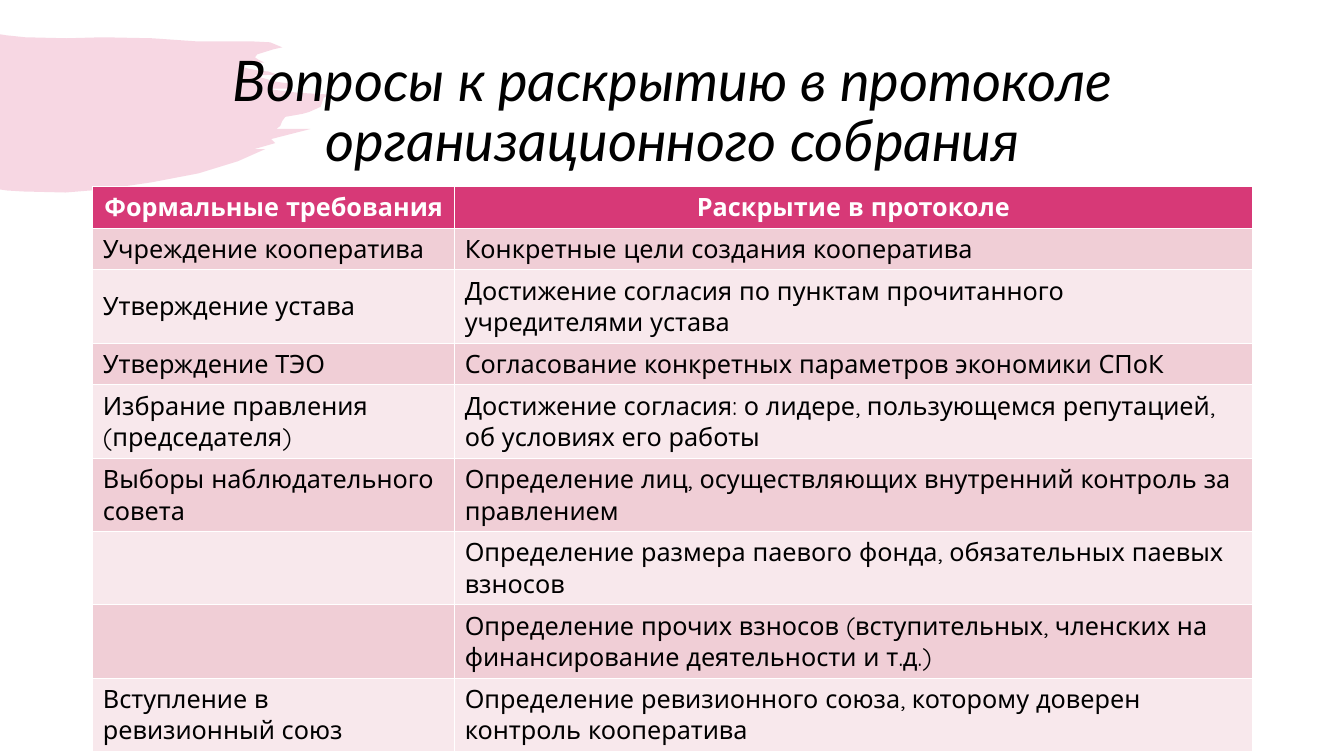
"""Build the slide on what the minutes of a founding meeting disclose."""
from typing import NamedTuple

from lxml import etree
from pptx import Presentation
from pptx.dml.color import RGBColor
from pptx.enum import text as t
from pptx.oxml import ns
from pptx.util import Inches, Pt

PINK = RGBColor(0xD7, 0x39, 0x77)
ROSE = RGBColor(0xF0, 0xCE, 0xD6)
BLUSH = RGBColor(0xF8, 0xE8, 0xEC)
BLACK = RGBColor(0, 0, 0)
WHITE = RGBColor(0xFF, 0xFF, 0xFF)


class Item(NamedTuple):
    """One row: a formal demand and its disclosure."""
    demand: str
    detail: str


TITLE = "Вопросы к раскрытию в протоколе организационного собрания"
HEAD = Item("Формальные требования", "Раскрытие в протоколе")
ITEMS = [
    Item("Учреждение кооператива", "Конкретные цели создания кооператива"),
    Item("Утверждение устава",
         "Достижение согласия по пунктам прочитанного учредителями устава"),
    Item("Утверждение ТЭО",
         "Согласование конкретных параметров экономики СПоК"),
    Item("Избрание правления (председателя)",
         "Достижение согласия: о лидере, пользующемся репутацией, "
         "об условиях его работы"),
    Item("Выборы наблюдательного совета",
         "Определение лиц, осуществляющих внутренний контроль за правлением"),
    Item("", "Определение размера паевого фонда, обязательных паевых взносов"),
    Item("", "Определение прочих взносов (вступительных, членских на "
             "финансирование деятельности и т.д.)"),
    Item("Вступление в ревизионный союз",
         "Определение ревизионного союза, которому доверен контроль "
         "кооператива"),
]
WIDTHS = (3.59, 7.91)
ROW = 0.41

BRUSH = [
    (0, 0.34), (0.06, 0.35), (0.25, 0.37), (0.66, 0.38), (1.02, 0.37),
    (1.51, 0.38), (1.94, 0.41), (2.48, 0.41), (2.68, 0.42), (2.8, 0.47),
    (2.71, 0.49), (2.55, 0.54), (2.53, 0.57), (2.56, 0.59), (2.62, 0.62),
    (2.46, 0.63), (2.38, 0.66), (2.46, 0.68), (2.56, 0.7), (2.66, 0.71),
    (2.75, 0.74), (2.51, 0.75), (2.63, 0.78), (2.73, 0.81), (2.8, 0.82),
    (2.88, 0.83), (2.9, 0.85), (2.87, 0.88), (2.84, 0.88), (2.63, 0.88),
    (2.95, 0.92), (3.3, 0.94), (3.21, 0.97), (3.18, 1.06), (3.07, 1.11),
    (3, 1.13), (2.83, 1.16), (2.8, 1.2), (2.78, 1.25), (2.74, 1.28),
    (3.08, 1.28), (2.69, 1.38), (2.73, 1.42), (2.52, 1.48), (2.63, 1.48),
    (2.36, 1.6), (1.97, 1.72), (1.5, 1.81), (1.02, 1.88), (0.65, 1.91),
    (0.23, 1.9), (0.07, 1.89), (0, 1.88),
]


def write(frame, words: str, *, size: float, font: str, color: RGBColor,
          bold: bool = False, slant: bool = False, center: bool = False,
          space: float = 1.0) -> None:
    """Put one formatted paragraph into a text frame."""
    para = frame.paragraphs[0]
    para.alignment = t.PP_ALIGN.CENTER if center else t.PP_ALIGN.LEFT
    para.line_spacing = space
    style = para.font
    if words:
        run = para.add_run()
        run.text = words
        style = run.font
    style.size, style.name = Pt(size), font
    style.bold, style.italic = bold, slant
    style.color.rgb = color


def brush(slide) -> None:
    """Draw the pale brush stroke behind the title."""
    spots = [(Inches(x), Inches(y)) for x, y in BRUSH]
    pen = slide.shapes.build_freeform(*spots[0])
    pen.add_line_segments(spots[1:], close=True)
    stroke = pen.convert_to_shape()
    stroke.shadow.inherit = False
    stroke.fill.solid()
    stroke.fill.fore_color.rgb = PINK
    stroke.line.fill.background()
    tint = stroke.element.find(".//" + ns.qn("a:srgbClr"))
    etree.SubElement(tint, ns.qn("a:alpha"), val="20000")
    slide.shapes.title.element.addprevious(stroke.element)


def heading(slide) -> None:
    """Place and format the title."""
    title = slide.shapes.title
    title.left, title.top = Inches(0.92), Inches(0.4)
    title.width, title.height = Inches(11.5), Inches(1.45)
    frame = title.text_frame
    frame.word_wrap = True
    frame.auto_size = t.MSO_AUTO_SIZE.NONE
    frame.vertical_anchor = t.MSO_ANCHOR.MIDDLE
    write(frame, TITLE, size=40, font="Lato", color=BLACK, slant=True,
          center=True, space=0.9)


def grid(slide) -> None:
    """Add the table with its banded rows."""
    rows = [HEAD, *ITEMS]
    table = slide.shapes.add_table(
        len(rows), len(WIDTHS), Inches(0.92), Inches(1.85),
        Inches(sum(WIDTHS)), Inches(ROW * len(rows))).table
    for col, width in zip(table.columns, WIDTHS):
        col.width = Inches(width)
    for i, item in enumerate(rows):
        top = i == 0
        table.rows[i].height = Inches(ROW)
        for j, words in enumerate(item):
            cell = table.cell(i, j)
            cell.fill.solid()
            cell.fill.fore_color.rgb = PINK if top else ROSE if i % 2 else BLUSH
            cell.vertical_anchor = (t.MSO_ANCHOR.TOP if top
                                    else t.MSO_ANCHOR.MIDDLE)
            write(cell.text_frame, words, size=18, font="Quicksand",
                  color=WHITE if top else BLACK, bold=top, center=top)


def main() -> None:
    """Build and save the deck."""
    deck = Presentation()
    deck.slide_width, deck.slide_height = Inches(13.33), Inches(7.5)
    slide = deck.slides.add_slide(deck.slide_layouts[5])
    heading(slide)
    brush(slide)
    grid(slide)
    deck.save("out.pptx")


if __name__ == "__main__":
    main()
